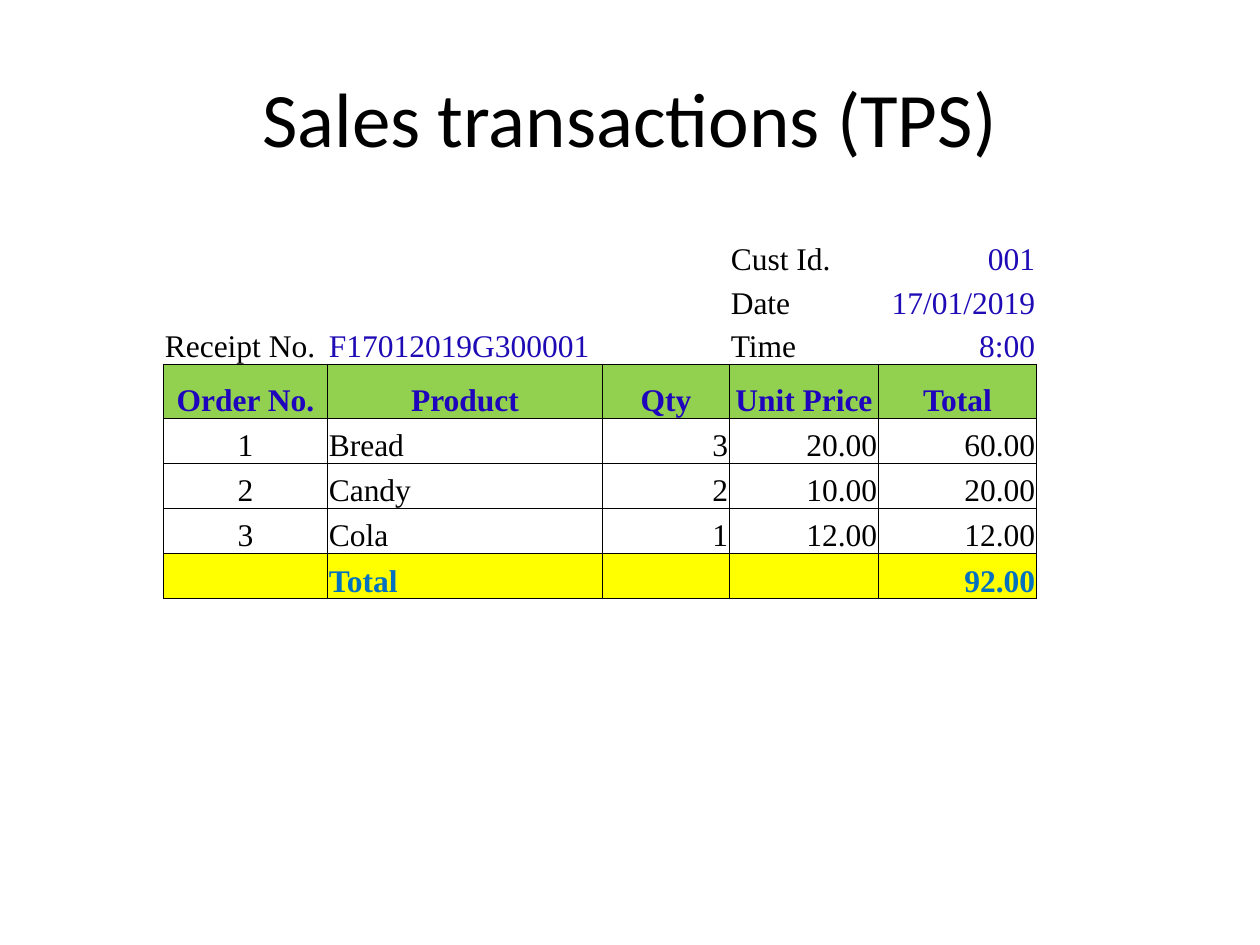
"""Build the sales transactions slide with its receipt table."""
from lxml.etree import SubElement
from pptx import Presentation
from pptx.dml.color import RGBColor
from pptx.enum.text import MSO_ANCHOR, PP_ALIGN
from pptx.oxml.ns import qn
from pptx.util import Pt

TITLE = "Sales transactions (TPS)"
DETAILS = [
    ("", "", "", "Cust Id.", "001"),
    ("", "", "", "Date", "17/01/2019"),
    ("Receipt No.", "F17012019G300001", "", "Time", "8:00"),
]
HEADER = ("Order No.", "Product", "Qty", "Unit Price", "Total")
ORDERS = [
    ("1", "Bread", "3", "20.00", "60.00"),
    ("2", "Candy", "2", "10.00", "20.00"),
    ("3", "Cola", "1", "12.00", "12.00"),
]
TOTAL = ("", "Total", "", "", "92.00")

BLACK = RGBColor(0x00, 0x00, 0x00)
ENTRY_BLUE = RGBColor(0x1F, 0x0B, 0xB5)
HEADER_BLUE = RGBColor(0x1E, 0x04, 0xBC)
TOTAL_BLUE = RGBColor(0x00, 0x70, 0xC0)
GREEN = RGBColor(0x92, 0xD0, 0x50)
YELLOW = RGBColor(0xFF, 0xFF, 0x00)

LEFT, TOP = 93.5, 133.9
COL_WIDTHS = (93.7, 157.1, 72.6, 85.1, 90.3)
DETAIL_H, HEADER_H, ORDER_H = 24.7, 30.9, 25.85
L, C, R = PP_ALIGN.LEFT, PP_ALIGN.CENTER, PP_ALIGN.RIGHT
DETAIL_ALIGN = (L, L, L, L, R)
HEADER_ALIGN = (C,) * 5
ORDER_ALIGN = (C, L, R, R, R)
DETAIL_COLORS = (BLACK, ENTRY_BLUE, BLACK, BLACK, ENTRY_BLUE)


def set_borders(cell, sides):
    tc_pr = cell._tc.get_or_add_tcPr()
    for side in "LRTB":
        ln = SubElement(tc_pr, qn(f"a:ln{side}"), w=str(Pt(0.5)))
        if side in sides:
            fill = SubElement(ln, qn("a:solidFill"))
            SubElement(fill, qn("a:srgbClr"), val=str(BLACK))
        else:
            SubElement(ln, qn("a:noFill"))


def style_cell(cell, text, align, color, bold, fill, sides):
    set_borders(cell, sides)
    if fill is None:
        cell.fill.background()
    else:
        cell.fill.solid()
        cell.fill.fore_color.rgb = fill
    cell.margin_left = cell.margin_right = cell.margin_top = Pt(0.75)
    cell.margin_bottom = Pt(0)
    cell.vertical_anchor = MSO_ANCHOR.BOTTOM
    cell.text = text
    p = cell.text_frame.paragraphs[0]
    p.alignment = align
    p.font.name, p.font.size, p.font.bold = "Times New Roman", Pt(18), bold
    p.font.color.rgb = color


def add_title(slide):
    tf = slide.shapes.add_textbox(Pt(36), Pt(21.6), Pt(648), Pt(90)).text_frame
    tf.word_wrap = True
    tf.vertical_anchor = MSO_ANCHOR.MIDDLE
    p = tf.paragraphs[0]
    p.text = TITLE
    p.alignment = C
    p.font.name, p.font.size = "Calibri", Pt(44)
    p.font.color.rgb = BLACK


def add_receipt(slide):
    rows = [(d, DETAIL_H, DETAIL_ALIGN, DETAIL_COLORS, False, None, "") for d in DETAILS[:-1]]
    rows.append((DETAILS[-1], DETAIL_H, DETAIL_ALIGN, DETAIL_COLORS, False, None, "B"))
    rows.append((HEADER, HEADER_H, HEADER_ALIGN, (HEADER_BLUE,) * 5, True, GREEN, "LRTB"))
    rows += [(o, ORDER_H, ORDER_ALIGN, (BLACK,) * 5, False, None, "LRTB") for o in ORDERS]
    rows.append((TOTAL, ORDER_H, ORDER_ALIGN, (TOTAL_BLUE,) * 5, True, YELLOW, "LRTB"))

    table = slide.shapes.add_table(
        len(rows), len(COL_WIDTHS), Pt(LEFT), Pt(TOP),
        Pt(sum(COL_WIDTHS)), Pt(sum(row[1] for row in rows)),
    ).table
    table.first_row = table.horz_banding = False
    for column, width in zip(table.columns, COL_WIDTHS):
        column.width = Pt(width)
    for i, (texts, height, aligns, colors, bold, fill, sides) in enumerate(rows):
        table.rows[i].height = Pt(height)
        for j, (text, align, color) in enumerate(zip(texts, aligns, colors)):
            style_cell(table.cell(i, j), text, align, color, bold, fill, sides)


def main():
    prs = Presentation()
    prs.slide_width, prs.slide_height = Pt(720), Pt(540)
    slide = prs.slides.add_slide(prs.slide_layouts[6])
    add_title(slide)
    add_receipt(slide)
    prs.save("out.pptx")


if __name__ == "__main__":
    main()
